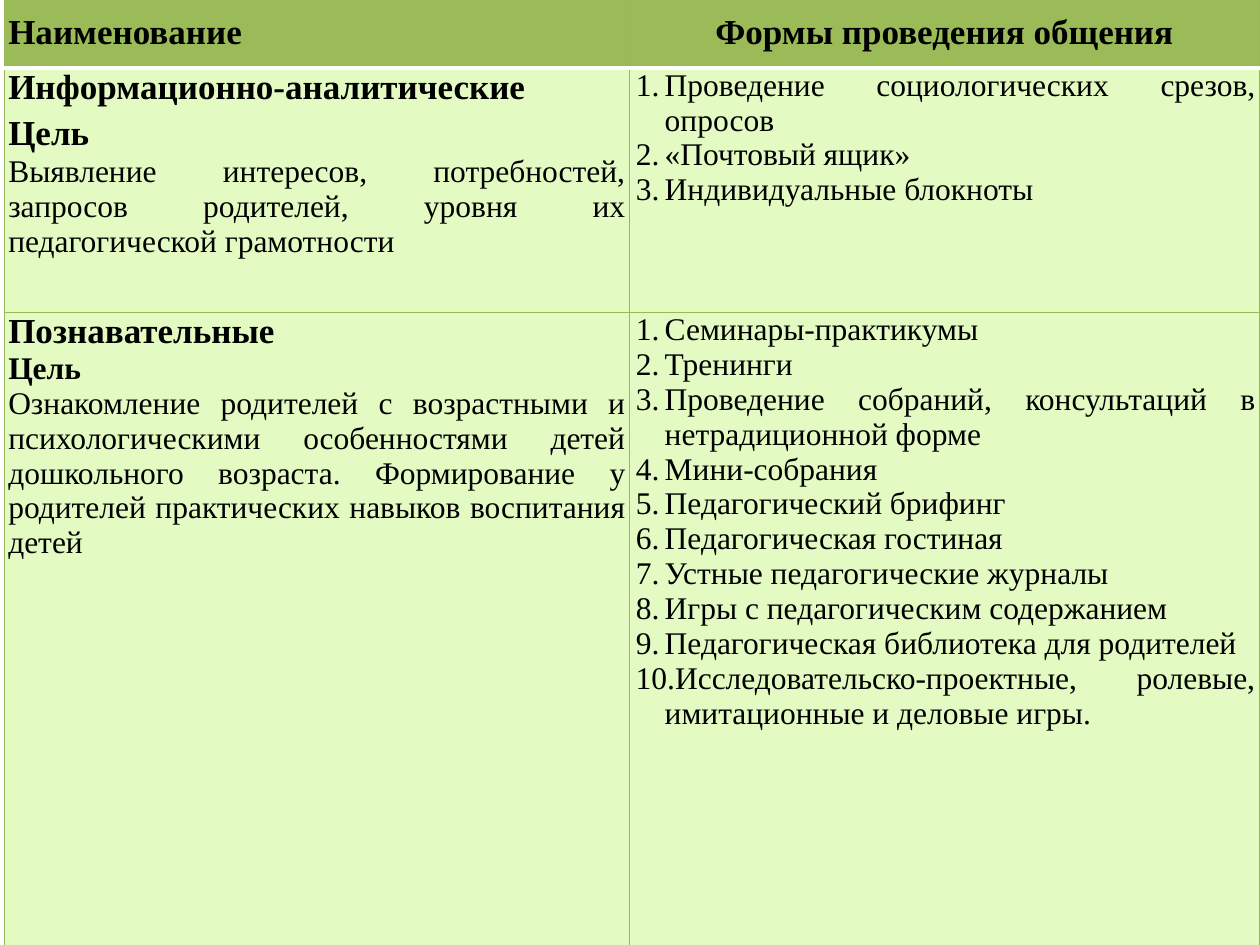
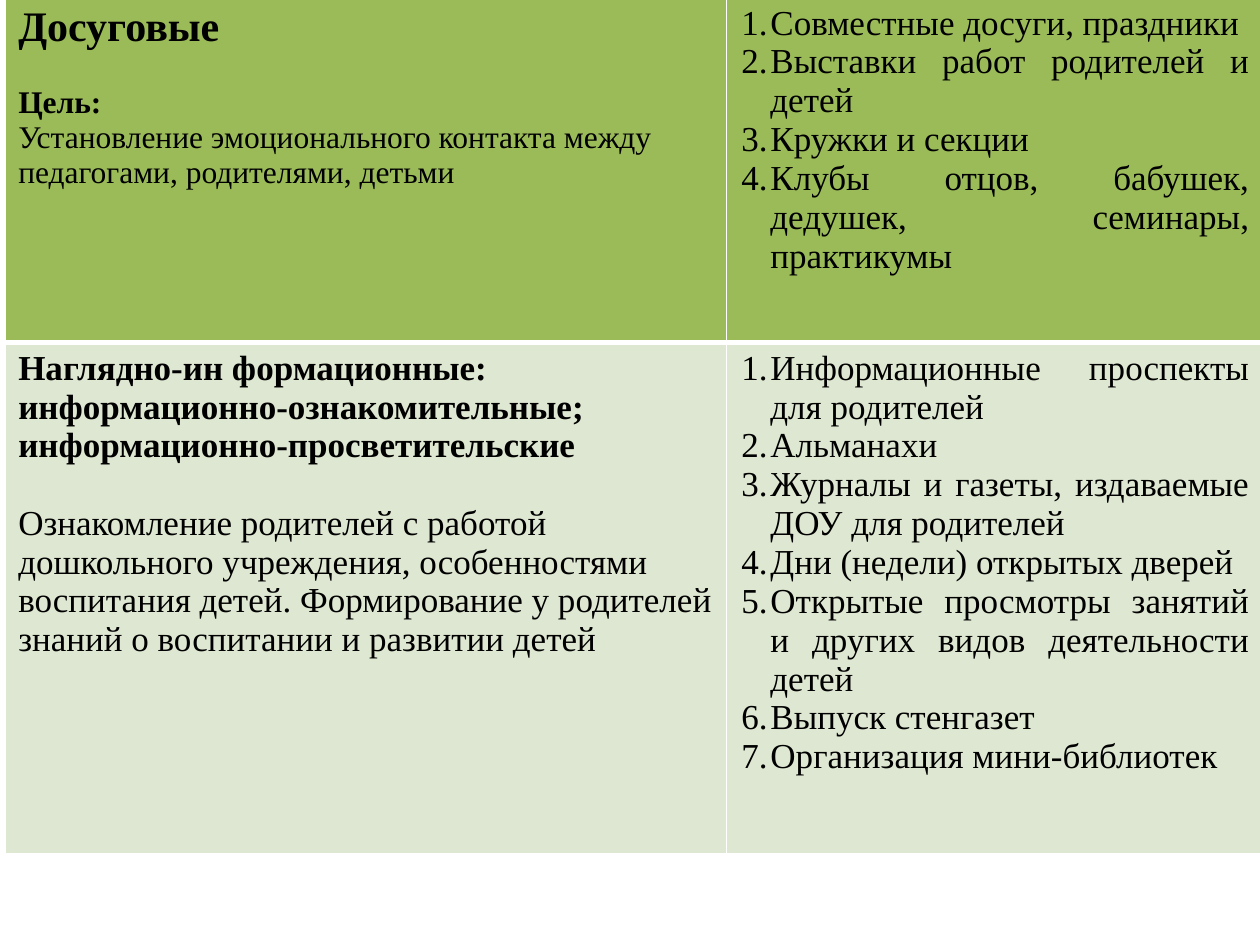
from lxml import etree
from pptx import Presentation
from pptx.dml.color import RGBColor as Rgb
from pptx.enum.text import MSO_ANCHOR as Anchor, PP_ALIGN as Align
from pptx.oxml.ns import qn
from pptx.util import Inches, Pt

COLORS = {"text": "000000", "band": "9BBB59", "rule": "98B955",
          "light": "E3FBC2", "pale": "DEE7D1", "white": "FFFFFF"}
COLUMNS, ROWS = 100, 75  # slide grid
SIDES = ("lnL", "lnR", "lnT", "lnB")


class Deck:
    """Holds the style and the current slide."""

    font = "Times New Roman"
    list_indent, list_hanging = 2.5, 2.3  # columns

    def __init__(self):
        self.deck = Presentation()
        self.deck.slide_width, self.deck.slide_height = Inches(10), Inches(7.5)
        self.page = None

    def across(self, columns):
        return round(self.deck.slide_width * columns / COLUMNS)

    def down(self, rows):
        return round(self.deck.slide_height * rows / ROWS)

    def add_page(self):
        self.page = self.deck.slides.add_slide(self.deck.slide_layouts[6])

    def add_table(self, left, top, widths, heights):
        frame = self.page.shapes.add_table(
            len(heights), len(widths), self.across(left), self.down(top),
            self.across(sum(widths)), self.down(sum(heights)))
        table = frame.table
        table.first_row = table.horz_banding = False
        for column, width in zip(table.columns, widths):
            column.width = self.across(width)
        for row, height in zip(table.rows, heights):
            row.height = self.down(height)
        return table

    def style_cell(self, cell, fill, borders, margins=None, anchor=Anchor.TOP):
        """Borders map a side to a colour name and a width in points."""
        cell.fill.solid()
        cell.fill.fore_color.rgb = Rgb.from_string(COLORS[fill])
        cell.vertical_anchor = anchor
        if margins:
            cell.margin_left = cell.margin_right = self.across(margins[0])
            cell.margin_top = cell.margin_bottom = self.down(margins[1])
        properties = cell._tc.get_or_add_tcPr()
        for index, side in enumerate(SIDES):
            color, width = borders[side]
            line = etree.Element(qn("a:" + side), w=str(Pt(width)))
            solid = etree.SubElement(line, qn("a:solidFill"))
            etree.SubElement(solid, qn("a:srgbClr"), val=COLORS[color])
            properties.insert(index, line)

    def add_para(self, cell, text, size, bold=False, align=Align.JUSTIFY,
                 before=0, numbered=False):
        frame = cell.text_frame
        para = frame.paragraphs[0] if not frame.text else frame.add_paragraph()
        para.text = text
        para.alignment = align
        if before:
            para.space_before = Pt(before)
        if numbered:
            properties = para._p.get_or_add_pPr()
            properties.set("marL", str(self.across(self.list_indent)))
            properties.set("indent", str(-self.across(self.list_hanging)))
            etree.SubElement(properties, qn("a:buFont"), typeface="+mj-lt")
            etree.SubElement(properties, qn("a:buAutoNum"), type="arabicPeriod")
        para.font.name, para.font.size, para.font.bold = self.font, Pt(size), bold
        para.font.color.rgb = Rgb.from_string(COLORS["text"])

    def add_list(self, cell, items, size):
        for item in items:
            self.add_para(cell, item, size, numbered=True)


def build_first(deck):
    deck.add_page()
    table = deck.add_table(0.36, -0.3, (49.6, 50), (5.7, 19.4, 52))

    # Fills and rules, with a white line under the header
    for row in range(3):
        borders = dict.fromkeys(SIDES, ("rule", 0.75))
        if row < 2:
            borders["lnB" if row == 0 else "lnT"] = ("white", 2)
        for column in range(2):
            deck.style_cell(table.cell(row, column), "light" if row else "band",
                            borders, (0.3, 0), Anchor.TOP if row else Anchor.MIDDLE)

    # Header
    deck.add_para(table.cell(0, 0), "Наименование", 20, True)
    deck.add_para(table.cell(0, 1), "Формы проведения общения", 20, True, Align.CENTER)

    # Kinds of work and their goals
    kinds = [
        ("Информационно-аналитические", 20, 4,
         "Выявление интересов, потребностей, запросов родителей, уровня их "
         "педагогической грамотности"),
        ("Познавательные", 18, 0,
         "Ознакомление родителей с возрастными и психологическими особенностями "
         "детей дошкольного возраста. Формирование у родителей практических "
         "навыков воспитания детей"),
    ]
    for row, (kind, goal_size, gap, goal) in enumerate(kinds, 1):
        cell = table.cell(row, 0)
        deck.add_para(cell, kind, 20, True)
        deck.add_para(cell, "Цель", goal_size, True, before=gap)
        deck.add_para(cell, goal, 18, before=gap / 4)

    # Forms of communication
    deck.add_list(table.cell(1, 1), [
        "Проведение социологических срезов, опросов",
        "«Почтовый ящик»",
        "Индивидуальные блокноты",
    ], 18)
    deck.add_list(table.cell(2, 1), [
        "Семинары-практикумы",
        "Тренинги",
        "Проведение собраний, консультаций в нетрадиционной форме",
        "Мини-собрания",
        "Педагогический брифинг",
        "Педагогическая гостиная",
        "Устные педагогические журналы",
        "Игры с педагогическим содержанием",
        "Педагогическая библиотека для родителей",
        "Исследовательско-проектные, ролевые, имитационные и деловые игры.",
    ], 18)


def build_second(deck):
    deck.add_page()
    table = deck.add_table(0.45, -0.2, (57.2, 42.5), (27.4, 40.6))

    # Fills and white rules, the middle one thicker
    for row, (fill, middle) in enumerate((("band", "lnB"), ("pale", "lnT"))):
        borders = dict.fromkeys(SIDES, ("white", 1)) | {middle: ("white", 3)}
        for column in range(2):
            deck.style_cell(table.cell(row, column), fill, borders)

    # Kinds of work and their goals
    leisure, visual = table.cell(0, 0), table.cell(1, 0)
    deck.add_para(leisure, "Досуговые", 24, True, Align.LEFT)
    deck.add_para(leisure, "Цель:", 18, True, Align.LEFT, before=20)
    deck.add_para(leisure, "Установление эмоционального контакта между педагогами, "
                  "родителями, детьми", 18, align=Align.LEFT)
    deck.add_para(visual, "Наглядно-ин формационные: информационно-ознакомительные; "
                  "информационно-просветительские", 20, True, Align.LEFT)
    deck.add_para(visual, "Ознакомление родителей с работой дошкольного учреждения, "
                  "особенностями воспитания детей. Формирование у родителей знаний "
                  "о воспитании и развитии детей", 20, align=Align.LEFT, before=22)

    # Forms of communication
    deck.add_list(table.cell(0, 1), [
        "Совместные досуги, праздники",
        "Выставки работ родителей и детей",
        "Кружки и секции",
        "Клубы отцов, бабушек, дедушек, семинары, практикумы",
    ], 20)
    deck.add_list(table.cell(1, 1), [
        "Информационные проспекты для родителей",
        "Альманахи",
        "Журналы и газеты, издаваемые ДОУ для родителей",
        "Дни (недели) открытых дверей",
        "Открытые просмотры занятий и других видов деятельности детей",
        "Выпуск стенгазет",
        "Организация мини-библиотек",
    ], 20)


def main():
    deck = Deck()
    build_first(deck)
    build_second(deck)
    deck.deck.save("out.pptx")


if __name__ == "__main__":
    main()
